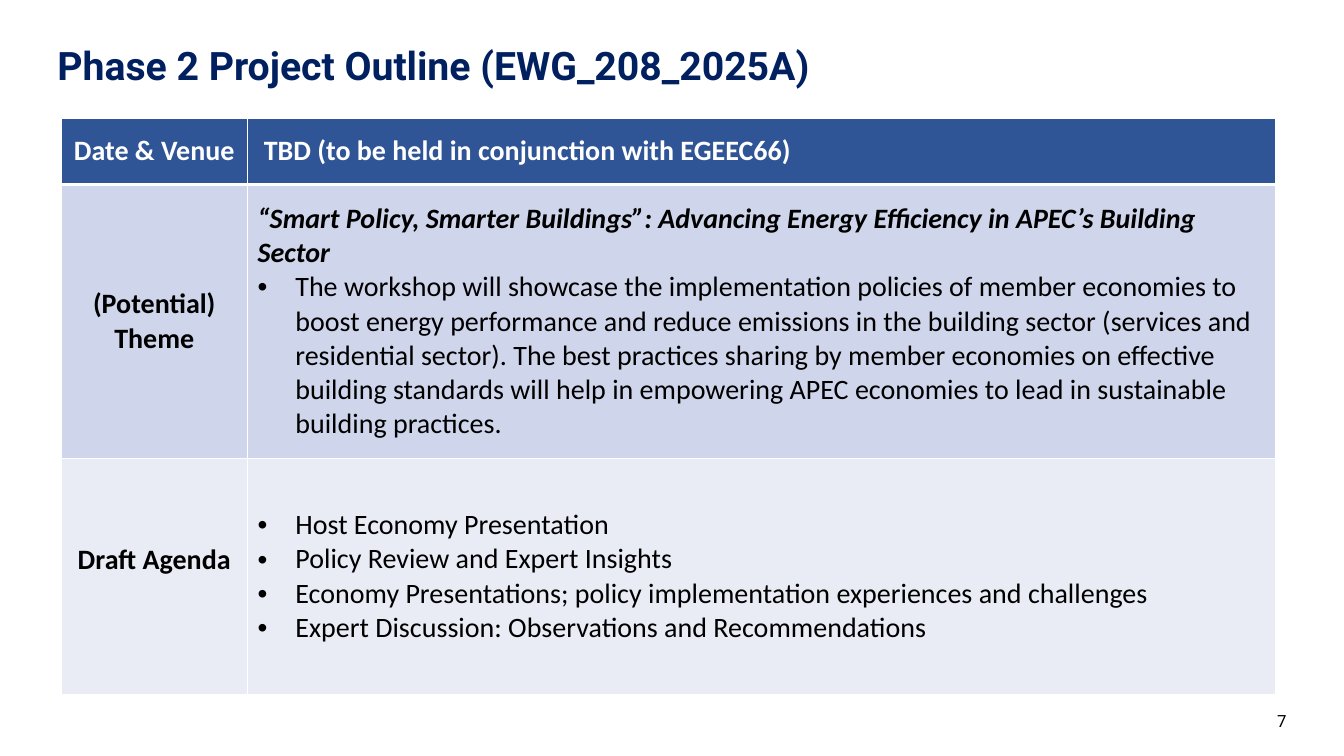
from lxml.etree import SubElement as Sub
from pptx import Presentation
from pptx.dml.color import RGBColor
from pptx.enum.text import MSO_ANCHOR as Anchor, MSO_AUTO_SIZE as Fit, PP_ALIGN as Align
from pptx.oxml.ns import qn
from pptx.util import Pt

NAVY, BLUE, WHITE, BLACK = "002060", "2F5597", "FFFFFF", "000000"
BANDS = [BLUE, "CFD5EA", "E9EBF5"]
COLS = [133.2, 734.4]
ROWS = [47.5, 195.8, 168.5]
THEME = ("“Smart Policy, Smarter Buildings”: Advancing Energy Efficiency "
         "in APEC’s Building Sector")
SCOPE = ("The workshop will showcase the implementation policies of member economies "
         "to boost energy performance and reduce emissions in the building sector "
         "(services and residential sector). The best practices sharing by member "
         "economies on effective building standards will help in empowering APEC "
         "economies to lead in sustainable building practices.")
AGENDA = ["Host Economy Presentation",
          "Policy Review and Expert Insights",
          "Economy Presentations; policy implementation experiences and challenges",
          "Expert Discussion: Observations and Recommendations"]


def color(code):
    return RGBColor.from_string(code)


def assign(item, values):
    for name, value in values.items():
        setattr(item, name, value)


def place(shape, left, top, width, height):
    assign(shape, {"left": Pt(left), "top": Pt(top),
                   "width": Pt(width), "height": Pt(height)})


def bullet(para):
    props = para._p.get_or_add_pPr()
    props.set("marL", str(Pt(27)))
    props.set("indent", str(-Pt(27)))
    Sub(props, qn("a:buFont"), typeface="Arial")
    Sub(props, qn("a:buChar"), char="•")


def write(para, text, size=20, face="Calibri", ink=BLACK, align=Align.LEFT,
          bold=False, italic=False, dot=False):
    if dot:
        bullet(para)
    para.alignment = align
    run = para.add_run()
    run.text = text
    assign(run.font, {"size": Pt(size), "name": face, "bold": bold, "italic": italic})
    run.font.color.rgb = color(ink)


def fill_cell(cell, paint, lines, widths):
    """Style one cell; lines are (text, format) pairs, widths are for L, R, T, B."""
    props = cell._tc.get_or_add_tcPr()
    for side, width in zip("LRTB", widths):
        line = Sub(props, qn("a:ln" + side), w=str(Pt(width)))
        Sub(Sub(line, qn("a:solidFill")), qn("a:srgbClr"), val=WHITE)
    cell.fill.solid()
    cell.fill.fore_color.rgb = color(paint)
    cell.vertical_anchor = Anchor.MIDDLE
    frame = cell.text_frame
    for i, (text, form) in enumerate(lines):
        para = frame.add_paragraph() if i else frame.paragraphs[0]
        write(para, text, **form)


def add_title(slide, text):
    title = slide.shapes.title
    place(title, 33.8, 24.5, 892, 42.5)
    frame = title.text_frame
    assign(frame, {"vertical_anchor": Anchor.BOTTOM, "auto_size": Fit.NONE,
                   "word_wrap": True})
    para = frame.paragraphs[0]
    para.line_spacing = 0.9
    write(para, text, 28, "Roboto", NAVY, bold=True)


def add_number(slide, text):
    box = slide.shapes.add_textbox(Pt(710), Pt(500.4), Pt(216), Pt(28.8))
    frame = box.text_frame
    assign(frame, {"vertical_anchor": Anchor.MIDDLE, "word_wrap": True})
    write(frame.paragraphs[0], text, 12, "Roboto", align=Align.RIGHT)


def add_outline(slide):
    head = {"bold": True, "ink": WHITE}
    label = {"bold": True, "align": Align.CENTER}
    point = {"dot": True}
    rows = [
        [[("Date & Venue", {**label, **head})],
         [("TBD (to be held in conjunction with EGEEC66)", head)]],
        [[("(Potential) Theme", label)],
         [(THEME, {"bold": True, "italic": True}), (SCOPE, point)]],
        [[("Draft Agenda", label)], [(item, point) for item in AGENDA]],
    ]
    table = slide.shapes.add_table(len(ROWS), len(COLS), Pt(43.6), Pt(84.3),
                                   Pt(sum(COLS)), Pt(sum(ROWS))).table
    for col, width in zip(table.columns, COLS):
        col.width = Pt(width)
    for r, (height, paint, cells) in enumerate(zip(ROWS, BANDS, rows)):
        table.rows[r].height = Pt(height)
        widths = (1, 1, 3 if r == 1 else 1, 3 if r == 0 else 1)
        for c, lines in enumerate(cells):
            fill_cell(table.cell(r, c), paint, lines, widths)
    table.cell(0, 1).margin_left = Pt(11.7)
    table.cell(2, 0).margin_bottom = Pt(27.6)


def main():
    deck = Presentation()
    assign(deck, {"slide_width": Pt(960), "slide_height": Pt(540)})
    slide = deck.slides.add_slide(deck.slide_layouts[5])
    add_title(slide, "Phase 2 Project Outline (EWG_208_2025A)")
    add_outline(slide)
    add_number(slide, "7")
    deck.save("out.pptx")


if __name__ == "__main__":
    main()
